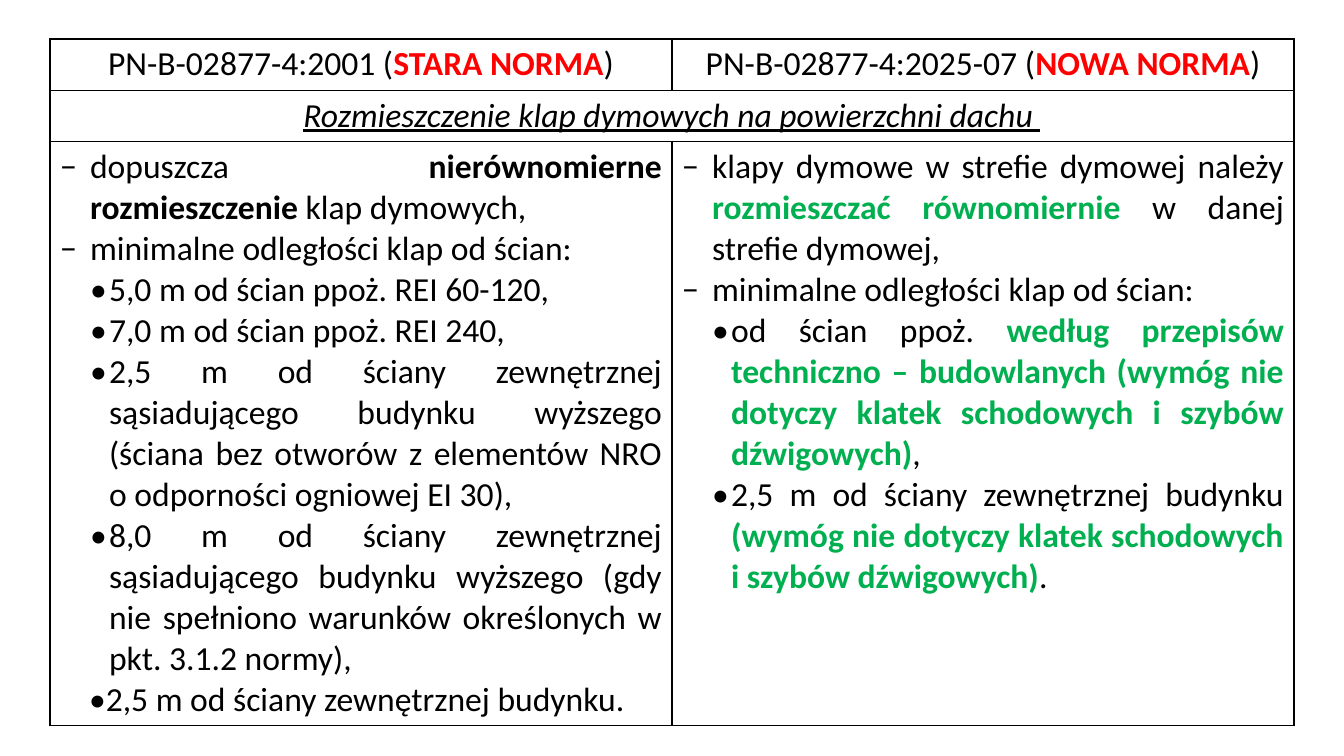
from lxml import etree
from pptx import Presentation
from pptx.dml.color import RGBColor
from pptx.enum.text import MSO_ANCHOR, PP_ALIGN
from pptx.oxml.ns import qn
from pptx.util import Emu, Pt

CENTER, JUSTIFY = PP_ALIGN.CENTER, PP_ALIGN.JUSTIFY
TOP, MIDDLE = MSO_ANCHOR.TOP, MSO_ANCHOR.MIDDLE

PX = 914400 / 100.8
COLORS = {"text": "000000", "border": "000000", "title": "FF0000", "new": "00B050"}

# Span styles: colour name, bold, italic and underlined
STYLES = {
    "plain": ("text", False, False),
    "bold": ("text", True, False),
    "title": ("title", True, False),
    "new": ("new", True, False),
    "topic": ("text", False, True),
}

# Bullet levels: character, left margin and hanging indent in px
LEVELS = {"dash": ("−", 30, 30), "dot": ("•", 49, 19), "tight": ("•", 39, 10)}

# Each paragraph is a level followed by (text, style) spans
HEADERS = [
    [("PN-B-02877-4:2001 (", "plain"), ("STARA NORMA", "title"), (")", "plain")],
    [("PN-B-02877-4:2025-07 (", "plain"), ("NOWA NORMA", "title"), (")", "plain")],
]
TOPIC = [("Rozmieszczenie klap dymowych na powierzchni dachu ", "topic")]
DISTANCES = ("dash", [("minimalne odległości klap od ścian:", "plain")])
OLD_RULES = [
    ("dash", [("dopuszcza ", "plain"), ("nierównomierne rozmieszczenie", "bold"),
              (" klap dymowych, ", "plain")]),
    DISTANCES,
    ("dot", [("5,0 m od ścian ppoż. REI 60-120,", "plain")]),
    ("dot", [("7,0 m od ścian ppoż. REI 240,", "plain")]),
    ("dot", [("2,5 m od ściany zewnętrznej sąsiadującego budynku wyższego (ściana bez "
              "otworów z elementów NRO o odporności ogniowej EI 30),", "plain")]),
    ("dot", [("8,0 m od ściany zewnętrznej sąsiadującego budynku wyższego (gdy nie "
              "spełniono warunków określonych w pkt. 3.1.2 normy),", "plain")]),
    ("tight", [("2,5 m od ściany zewnętrznej budynku.", "plain")]),
]
NEW_RULES = [
    ("dash", [("klapy dymowe w strefie dymowej należy ", "plain"),
              ("rozmieszczać równomiernie", "new"),
              (" w danej strefie dymowej,", "plain")]),
    DISTANCES,
    ("dot", [("od ścian ppoż. ", "plain"),
             ("według przepisów techniczno – budowlanych (wymóg nie dotyczy klatek "
              "schodowych i szybów dźwigowych)", "new"), (",", "plain")]),
    ("dot", [("2,5 m od ściany zewnętrznej budynku ", "plain"),
             ("(wymóg nie dotyczy klatek schodowych i szybów dźwigowych)", "new"),
             (". ", "plain")]),
]


def px(length):
    return Emu(round(length * PX))


class Page:
    """Text style and the slide that elements are added to."""

    font = "Calibri"
    size = Pt(24)
    border = Pt(1)

    def __init__(self, deck):
        self.slide = deck.slides.add_slide(deck.slide_layouts[6])

    def table(self, left, top, widths, heights):
        frame = self.slide.shapes.add_table(
            len(heights), len(widths), px(left), px(top), px(sum(widths)), px(sum(heights)))
        table = frame.table
        table.first_row = table.horz_banding = False
        for column, width in zip(table.columns, widths):
            column.width = px(width)
        for row, height in zip(table.rows, heights):
            row.height = px(height)
        for cell in table.iter_cells():
            cell.fill.background()
            self.borders(cell)
        return table

    def borders(self, cell):
        properties = cell._tc.get_or_add_tcPr()
        for position, side in enumerate(("lnL", "lnR", "lnT", "lnB")):
            line = etree.Element(qn(f"a:{side}"), w=str(self.border))
            fill = etree.SubElement(line, qn("a:solidFill"))
            etree.SubElement(fill, qn("a:srgbClr"), val=COLORS["border"])
            properties.insert(position, line)

    def cell(self, cell, paragraphs, align, anchor):
        cell.vertical_anchor = anchor
        frame = cell.text_frame
        for number, (level, spans) in enumerate(paragraphs):
            para = frame.add_paragraph() if number else frame.paragraphs[0]
            para.alignment = align
            if level:
                self.bullet(para, *LEVELS[level])
            for text, style in spans:
                self.span(para, text, style)

    def bullet(self, para, character, margin, hanging):
        properties = para._p.get_or_add_pPr()
        properties.set("marL", str(px(margin)))
        properties.set("indent", str(-px(hanging)))
        etree.SubElement(properties, qn("a:buFont"), typeface=self.font)
        etree.SubElement(properties, qn("a:buChar"), char=character)

    def span(self, para, text, style):
        color, bold, topic = STYLES[style]
        span = para.add_run()
        span.text = text
        span.font.name, span.font.size = self.font, self.size
        span.font.bold = bold
        span.font.italic = span.font.underline = topic
        span.font.color.rgb = RGBColor.from_string(COLORS[color])


def main():
    deck = Presentation()
    deck.slide_width, deck.slide_height = px(1344), px(756)
    page = Page(deck)

    # Comparison table
    table = page.table(50, 39, [622, 622], [48, 48, 580])

    # Standard names
    for column, spans in enumerate(HEADERS):
        page.cell(table.cell(0, column), [(None, spans)], CENTER, MIDDLE)

    # Topic across both columns
    table.cell(1, 0).merge(table.cell(1, 1))
    page.cell(table.cell(1, 0), [(None, TOPIC)], CENTER, MIDDLE)

    # Rules of each standard
    for column, rules in enumerate((OLD_RULES, NEW_RULES)):
        page.cell(table.cell(2, column), rules, JUSTIFY, TOP)

    deck.save("out.pptx")


if __name__ == "__main__":
    main()
